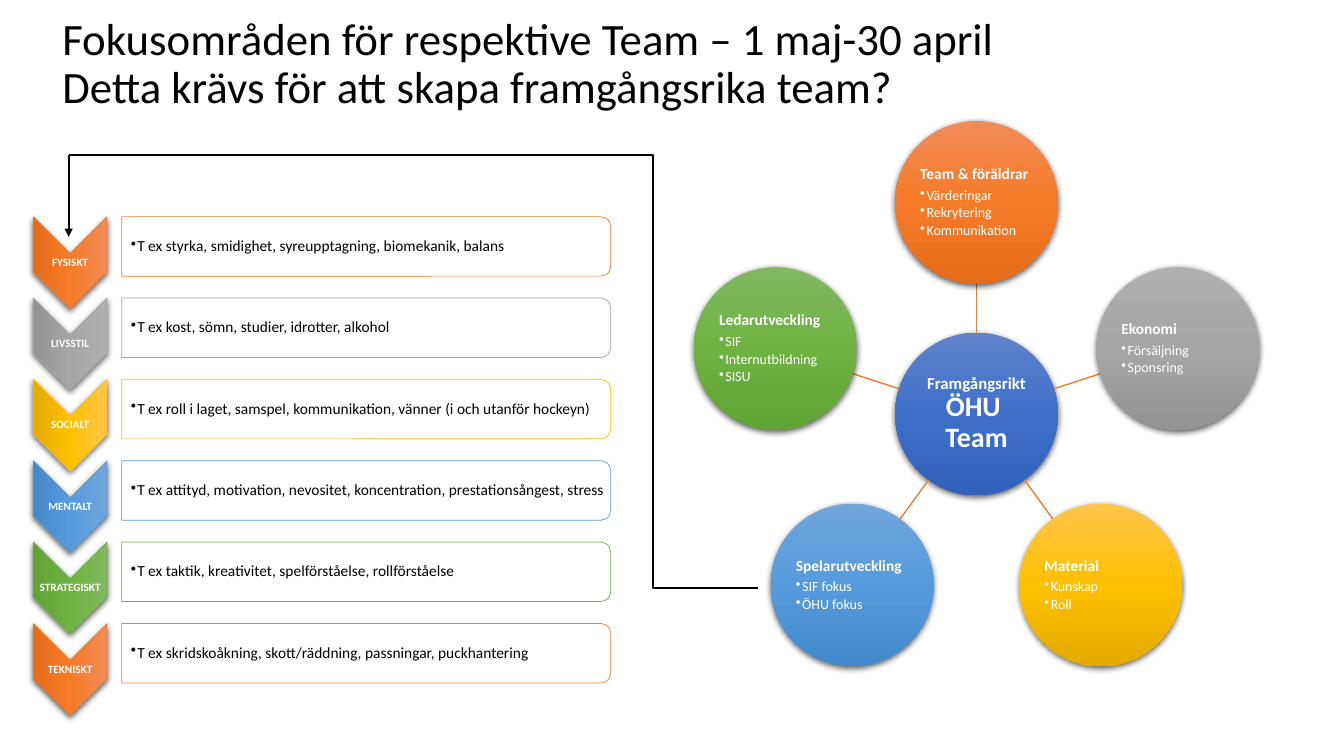
import math
import pptx
import pptx.util
import pptx.dml.color
import pptx.enum.shapes
import pptx.enum.text
import pptx.oxml
import pptx.oxml.ns

Cm = pptx.util.Cm
Pt = pptx.util.Pt
Shape = pptx.enum.shapes.MSO_SHAPE
Connector = pptx.enum.shapes.MSO_CONNECTOR
Align = pptx.enum.text.PP_ALIGN
Anchor = pptx.enum.text.MSO_ANCHOR

TITLE = ["Fokusområden för respektive Team – 1 maj-30 april",
         "Detta krävs för att skapa framgångsrika team?"]
PALETTE = {
    "orange": ("ED7D31", "F18C57", "F67B28", "E56C19"),
    "grey": ("A5A5A5", "AFAFAF", "A5A5A5", "939393"),
    "yellow": ("FFC000", "FFC64B", "FFC000", "E3AB00"),
    "blue": ("5B9BD5", "71A6DB", "559BDB", "448ACA"),
    "green": ("70AD47", "81B861", "6FB242", "62A336"),
    "navy": ("4472C4", "6183CB", "3E70CA", "3062BB"),
}
AREAS = [
    ("FYSISKT", "T ex styrka, smidighet, syreupptagning, biomekanik, balans", "orange"),
    ("LIVSSTIL", "T ex kost, sömn, studier, idrotter, alkohol", "grey"),
    ("SOCIALT", "T ex roll i laget, samspel, kommunikation, vänner (i och utanför hockeyn)", "yellow"),
    ("MENTALT", "T ex attityd, motivation, nevositet, koncentration, prestationsångest, stress", "blue"),
    ("STRATEGISKT", "T ex taktik, kreativitet, spelförståelse, rollförståelse", "green"),
    ("TEKNISKT", "T ex skridskoåkning, skott/räddning, passningar, puckhantering", "orange"),
]
FACTORS = [
    ("Team & föräldrar", ["Värderingar", "Rekrytering", "Kommunikation"], "orange"),
    ("Ekonomi", ["Försäljning", "Sponsring"], "grey"),
    ("Material", ["Kunskap", "Roll"], "yellow"),
    ("Spelarutveckling", ["SIF fokus", "ÖHU fokus"], "blue"),
    ("Ledarutveckling", ["SIF", "Internutbildning", "SISU"], "green"),
]
ROW_TOP, ROW_PITCH = 6.21, 2.05
CHEVRON_X, CHEVRON_DROP = 1.77, 0.41
BAR_X, BAR_LENGTH, BAR_HEIGHT = 9.23, 12.32, 1.5
HUB_X, HUB_Y, ORBIT, DIAMETER = 24.61, 10.43, 5.33, 4.1
ROUTE_X, ROUTE_TOP = 1.73, 3.91

deck = pptx.Presentation()
deck.slide_width, deck.slide_height = Cm(33.87), Cm(19.05)
page = deck.slides.add_slide(deck.slide_layouts[6])


def color(value):
    return pptx.dml.color.RGBColor.from_string(value)


def element(markup):
    return pptx.oxml.parse_xml(f"<a:holder {pptx.oxml.ns.nsdecls('a')}>{markup}</a:holder>")[0]


def add_centred(kind, x, y, width, height):
    shape = page.shapes.add_shape(kind, Cm(x - width / 2), Cm(y - height / 2), Cm(width), Cm(height))
    shape.shadow.inherit = False
    shape.line.fill.background()
    return shape


def add_gloss(shape, tone):
    properties = shape._element.spPr
    stops = "".join(f'<a:gs pos="{place}"><a:srgbClr val="{value}"/></a:gs>'
                    for place, value in zip((0, 50000, 100000), PALETTE[tone][1:]))
    properties.insert(2, element(f'<a:gradFill rotWithShape="1"><a:gsLst>{stops}</a:gsLst>'
                                 '<a:lin ang="5400000" scaled="0"/></a:gradFill>'))
    properties.find(pptx.oxml.ns.qn("a:effectLst")).append(element(
        '<a:outerShdw blurRad="57150" dist="19050" dir="5400000" algn="ctr" rotWithShape="0">'
        '<a:srgbClr val="000000"><a:alpha val="63000"/></a:srgbClr></a:outerShdw>'))


def outline(shape, value, width):
    shape.line.color.rgb = color(value)
    shape.line.width = Pt(width)


def prepare(box, left=0.03, other=0.03):
    frame = box.text_frame
    frame.word_wrap = True
    frame.vertical_anchor = Anchor.MIDDLE
    frame.margin_left = Cm(left)
    frame.margin_right = frame.margin_top = frame.margin_bottom = Cm(other)
    return frame


def add_span(para, text, size, value, bold=False):
    span = para.add_run()
    span.text = text
    span.font.name = "Calibri"
    span.font.size = Pt(size)
    span.font.bold = bold
    span.font.color.rgb = color(value)


def style(para, align=Align.LEFT, after=0, bullet=False):
    para.alignment = align
    para.line_spacing = 0.9
    para.space_after = Pt(after)
    if bullet:
        para.level = 1
        properties = para._p.get_or_add_pPr()
        properties.set("marL", str(Cm(0.16)))
        properties.set("indent", str(-Cm(0.16)))
        properties.append(element('<a:buChar char="•"/>'))
    return para


def add_text_box(left, top, width, height):
    return page.shapes.add_textbox(Cm(left), Cm(top), Cm(width), Cm(height))


def add_line(kind, start, end, value, width):
    line = page.shapes.add_connector(kind, *(Cm(length) for length in (*start, *end)))
    outline(line, value, width)
    line._element.spPr.append(element("<a:effectLst/>"))
    return line


def on_spoke(angle, distance):
    return HUB_X + distance * math.cos(angle), HUB_Y + distance * math.sin(angle)


def add_circle(x, y, tone):
    circle = add_centred(Shape.OVAL, x, y, DIAMETER, DIAMETER)
    add_gloss(circle, tone)
    return prepare(circle)


def add_hub():
    para = style(add_circle(HUB_X, HUB_Y, "navy").paragraphs[0], Align.CENTER)
    add_span(para, "Framgångsrikt ", 12, "FFFFFF", True)
    add_span(para, "ÖHU ", 20, "FFFFFF", True)
    para.add_line_break()
    add_span(para, "Team", 20, "FFFFFF", True)


def add_factor(index, heading, points, tone):
    angle = math.radians(360 / len(FACTORS) * index - 90)
    add_line(Connector.STRAIGHT, on_spoke(angle, DIAMETER / 2),
             on_spoke(angle, ORBIT - DIAMETER / 2), "ED7D31", 1)
    frame = add_circle(*on_spoke(angle, ORBIT), tone)
    add_span(style(frame.paragraphs[0], after=3.85), heading, 11, "FFFFFF", True)
    for point in points:
        add_span(style(frame.add_paragraph(), after=1.5, bullet=True), point, 10, "FFFFFF")


def add_area(index, label, example, tone):
    y = ROW_TOP + index * ROW_PITCH
    chevron_y = y + CHEVRON_DROP
    chevron = add_centred(Shape.CHEVRON, CHEVRON_X, chevron_y, 2.31, 1.86)
    chevron.rotation = 90
    add_gloss(chevron, tone)
    outline(chevron, PALETTE[tone][0], 0.5)
    frame = prepare(add_text_box(CHEVRON_X - 0.93, chevron_y - 0.24, 1.86, 0.48))
    add_span(style(frame.paragraphs[0], Align.CENTER), label, 8, "FFFFFF", True)

    bar = add_centred(Shape.ROUND_2_SAME_RECTANGLE, BAR_X, y, BAR_HEIGHT, BAR_LENGTH)
    bar.rotation = 90
    bar.fill.solid()
    bar.fill.fore_color.rgb = color("FFFFFF")
    outline(bar, PALETTE[tone][0], 0.5)
    frame = prepare(add_text_box(BAR_X - BAR_LENGTH / 2, y - 0.69, 12.25, 1.38), 0.23)
    add_span(style(frame.paragraphs[0], bullet=True), example, 11, "000000")


add_hub()
for index, factor in enumerate(FACTORS):
    add_factor(index, *factor)

title = style(prepare(add_text_box(1.32, 0.25, 29.29, 2.77), 0.25, 0.13).paragraphs[0])
add_span(title, TITLE[0], 32, "000000")
title.add_line_break()
add_span(title, TITLE[1], 32, "000000")

for index, area in enumerate(AREAS):
    add_area(index, *area)

route = add_line(Connector.ELBOW, (19.1, 14.81), (ROUTE_X, ROUTE_TOP), "000000", 1.5)
route._element.spPr.prstGeom.get_or_add_avLst().append(element('<a:gd name="adj1" fmla="val 15200"/>'))
arrow = add_line(Connector.STRAIGHT, (ROUTE_X, ROUTE_TOP), (ROUTE_X, 5.97), "000000", 1.5)
arrow.get_or_add_ln().append(element('<a:tailEnd type="triangle"/>'))

deck.save("out.pptx")
